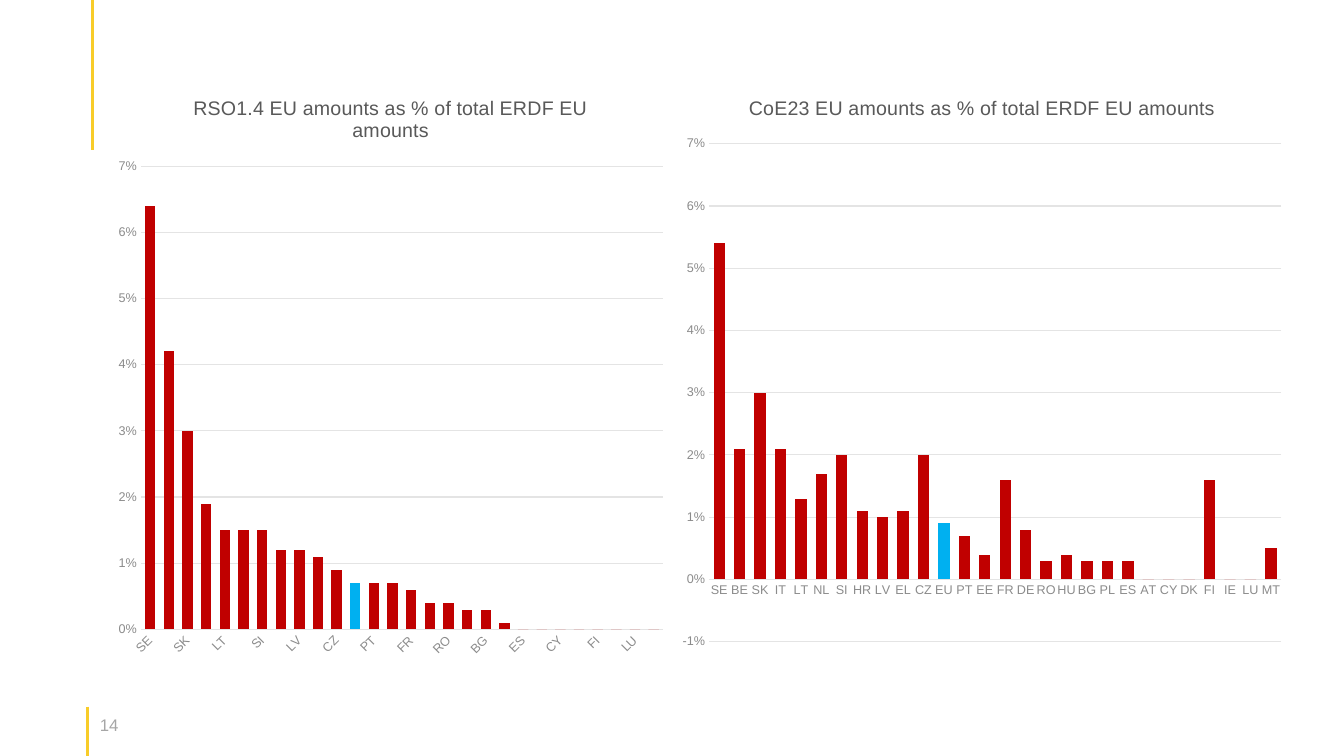
from dataclasses import dataclass

from lxml.etree import SubElement
from pptx import Presentation
from pptx.chart.data import CategoryChartData
from pptx.dml.color import RGBColor
from pptx.enum.chart import XL_CHART_TYPE, XL_TICK_MARK
from pptx.enum.shapes import MSO_CONNECTOR
from pptx.oxml import parse_xml
from pptx.oxml.ns import nsdecls, qn
from pptx.slide import Slide
from pptx.text.text import Font
from pptx.util import Pt


@dataclass(frozen=True)
class Theme:
    font: str = "Arial"
    accent: str = "F8CC29"
    bar: str = "C00000"
    highlight: str = "00B0F0"
    title: str = "595959"
    body: str = "4D4D4D"
    axis: str = "8B8B8B"
    grid: str = "E4E4E4"
    number: str = "A6A6A6"
    title_size: float = 14
    number_size: float = 12
    body_size: float = 10
    axis_size: float = 9
    accent_width: float = 2.25
    grid_width: float = 0.75


@dataclass(frozen=True)
class Rule:
    left: float
    top: float
    bottom: float


@dataclass(frozen=True)
class ShareChart:
    title: str
    left: float
    width: float
    minimum: float
    plot: tuple[float, float, float, float]
    values: tuple[float, ...]


THEME = Theme()
CHART_TOP = 53.3
CHART_HEIGHT = 419
HIGHLIGHTED = "EU"
COUNTRIES = (
    "SE BE SK IT LT NL SI HR LV EL CZ EU PT EE "
    "FR DE RO HU BG PL ES AT CY DK FI IE LU MT"
).split()

RULES = (Rule(62.6, 504.7, 540), Rule(66.2, 0, 107.3))

CHARTS = (
    ShareChart(
        "RSO1.4 EU amounts as % of total ERDF EU amounts",
        76.3, 405.4, 0, (0.06, 0.156, 0.92, 0.79),
        (0.064, 0.042, 0.03, 0.019, 0.015, 0.015, 0.015, 0.012, 0.012, 0.011,
         0.009, 0.007, 0.007, 0.007, 0.006, 0.004, 0.004, 0.003, 0.003, 0.001,
         0, 0, 0, 0, 0, 0, 0, 0),
    ),
    ShareChart(
        "CoE23 EU amounts as % of total ERDF EU amounts",
        478.8, 445.7, -0.01, (0.062, 0.118, 0.917, 0.849),
        (0.054, 0.021, 0.03, 0.021, 0.013, 0.017, 0.02, 0.011, 0.01, 0.011,
         0.02, 0.009, 0.007, 0.004, 0.016, 0.008, 0.003, 0.004, 0.003, 0.003,
         0.003, 0, 0, 0, 0.016, 0, 0, 0.005),
    ),
)


def style_font(font: Font, size: float, color: str) -> None:
    font.name = THEME.font
    font.size = Pt(size)
    font.bold = False
    font.color.rgb = RGBColor.from_string(color)


def add_text(page: Slide, text: str, *, left: float, top: float, width: float,
             height: float, size: float, color: str) -> None:
    box = page.shapes.add_textbox(Pt(left), Pt(top), Pt(width), Pt(height))
    frame = box.text_frame
    frame.word_wrap = True
    frame.margin_left = frame.margin_right = 0
    frame.margin_top = frame.margin_bottom = Pt(3.6)
    span = frame.paragraphs[0].add_run()
    span.text = text
    style_font(span.font, size, color)


def add_rule(page: Slide, rule: Rule) -> None:
    line = page.shapes.add_connector(
        MSO_CONNECTOR.STRAIGHT,
        Pt(rule.left), Pt(rule.top), Pt(rule.left), Pt(rule.bottom))
    line.line.color.rgb = RGBColor.from_string(THEME.accent)
    line.line.width = Pt(THEME.accent_width)
    SubElement(line._element.spPr, qn("a:effectLst"))


def add_share_chart(page: Slide, share: ShareChart) -> None:
    data = CategoryChartData(number_format="0%")
    data.categories = COUNTRIES
    data.add_series("Series 1", share.values)
    chart = page.shapes.add_chart(
        XL_CHART_TYPE.COLUMN_CLUSTERED, Pt(share.left), Pt(CHART_TOP),
        Pt(share.width), Pt(CHART_HEIGHT), data).chart
    chart.has_legend = False
    style_font(chart.font, THEME.body_size, THEME.body)

    chart.has_title = True
    para = chart.chart_title.text_frame.paragraphs[0]
    span = para.add_run()
    span.text = share.title
    style_font(span.font, THEME.title_size, THEME.title)
    chart.chart_title.include_in_layout = False

    for axis in (chart.category_axis, chart.value_axis):
        axis.major_tick_mark = axis.minor_tick_mark = XL_TICK_MARK.NONE
        style_font(axis.tick_labels.font, THEME.axis_size, THEME.axis)
    values = chart.value_axis
    values.minimum_scale = share.minimum
    values.maximum_scale = 0.07
    values.major_unit = 0.01
    values.tick_labels.number_format = "0%"
    values.tick_labels.number_format_is_linked = False
    values.format.line.fill.background()
    for line in (chart.category_axis.format.line,
                 values.major_gridlines.format.line):
        line.color.rgb = RGBColor.from_string(THEME.grid)
        line.width = Pt(THEME.grid_width)

    plot = chart.plots[0]
    plot.gap_width = 80
    plot.overlap = -27
    plot.vary_by_categories = False
    series = plot.series[0]
    series.invert_if_negative = False
    point = series.points[COUNTRIES.index(HIGHLIGHTED)]
    for target, color in ((series, THEME.bar), (point, THEME.highlight)):
        target.format.fill.solid()
        target.format.fill.fore_color.rgb = RGBColor.from_string(color)
    place_plot(chart, share.plot)


def place_plot(chart, bounds: tuple[float, float, float, float]) -> None:
    area = chart._chartSpace.chart.plotArea
    for old in area.findall(qn("c:layout")):
        area.remove(old)
    sizes = "".join(f'<c:{name} val="{value}"/>'
                    for name, value in zip("xywh", bounds))
    area.insert(0, parse_xml(
        f'<c:layout {nsdecls("c")}><c:manualLayout>'
        '<c:layoutTarget val="inner"/><c:xMode val="edge"/>'
        f'<c:yMode val="edge"/>{sizes}</c:manualLayout></c:layout>'))


def main() -> None:
    deck = Presentation()
    deck.slide_width, deck.slide_height = Pt(960), Pt(540)
    page = deck.slides.add_slide(deck.slide_layouts[6])
    add_text(page, "14", left=71.3, top=506.9, width=35.3, height=21.6,
             size=THEME.number_size, color=THEME.number)
    for rule in RULES:
        add_rule(page, rule)
    for share in CHARTS:
        add_share_chart(page, share)
    deck.save("out.pptx")


if __name__ == "__main__":
    main()
